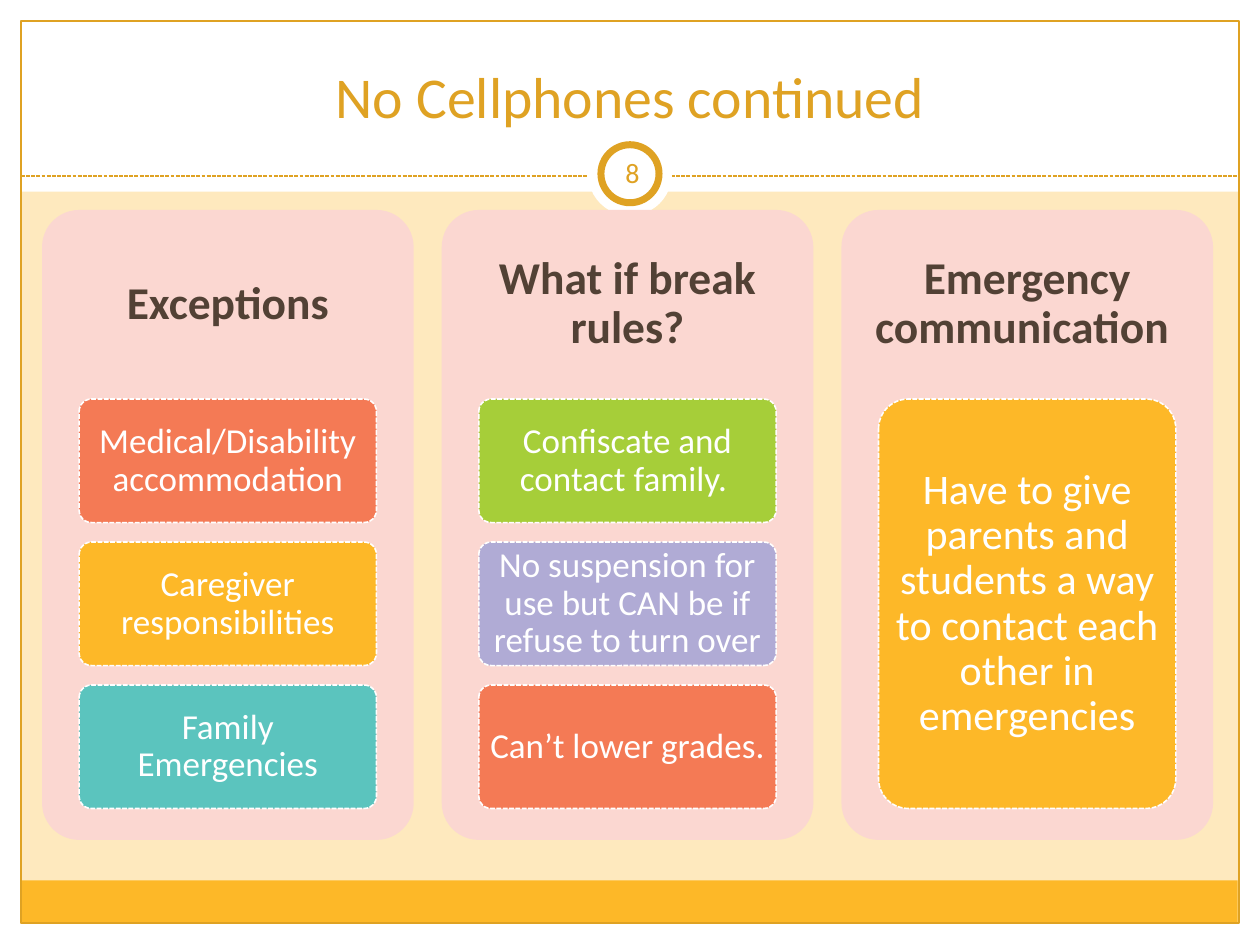
from pptx import Presentation, util as u
from pptx.dml.color import RGBColor
from pptx.enum import dml, shapes, text
from pptx.oxml.ns import qn
from lxml import etree

WHITE = RGBColor(0xFF, 0xFF, 0xFF)
CREAM = RGBColor(0xFE, 0xE9, 0xBE)
GOLD = RGBColor(0xDF, 0xA2, 0x23)
AMBER = RGBColor(0xFD, 0xB8, 0x28)
PINK = RGBColor(0xFB, 0xD7, 0xD1)
BROWN = RGBColor(0x52, 0x41, 0x35)
CORAL = RGBColor(0xF4, 0x7A, 0x55)
TEAL = RGBColor(0x5B, 0xC4, 0xBE)
GREEN = RGBColor(0xA6, 0xCE, 0x39)
LILAC = RGBColor(0xB0, 0xAB, 0xD5)

RECT = shapes.MSO_SHAPE.RECTANGLE
ROUND = shapes.MSO_SHAPE.ROUNDED_RECTANGLE
OVAL = shapes.MSO_SHAPE.OVAL

COLUMNS = [
    ("Exceptions", 20, [
        ("Medical/Disability accommodation", CORAL),
        ("Caregiver responsibilities", AMBER),
        ("Family Emergencies", TEAL)]),
    ("What if break rules?", 20, [
        ("Confiscate and contact family. ", GREEN),
        ("No suspension for use but CAN be if refuse to turn over", LILAC),
        ("Can’t lower grades.", CORAL)]),
    ("Emergency communication ", 24, [
        ("Have to give parents and students a way to contact each other in emergencies", AMBER)]),
]


def write(sp, words, size=20, color=WHITE, bold=False, spacing=0.9,
          anchor=text.MSO_ANCHOR.MIDDLE, margins=(4.3, 2.9)):
    tf = sp.text_frame
    tf.word_wrap = True
    tf.vertical_anchor = anchor
    tf.margin_left = tf.margin_right = u.Pt(margins[0])
    tf.margin_top = tf.margin_bottom = u.Pt(margins[1])
    p = tf.paragraphs[0]
    p.alignment = text.PP_ALIGN.CENTER
    p.line_spacing = spacing
    r = p.add_run()
    r.text = words
    r.font.name = "Calibri"
    r.font.size = u.Pt(size)
    r.font.bold = bold
    r.font.color.rgb = color


class Deck:
    """Holds the style and the current slide, and draws each kind of element."""

    def __init__(self, width, height, background):
        self.prs = Presentation()
        self.prs.slide_width, self.prs.slide_height = u.Pt(width), u.Pt(height)
        self.slide = self.prs.slides.add_slide(self.prs.slide_layouts[6])
        self.slide.background.fill.solid()
        self.slide.background.fill.fore_color.rgb = background

    def outline(self, line, color, width, dashed=False):
        line.color.rgb = color
        line.width = u.Pt(width)
        if dashed:
            line.dash_style = dml.MSO_LINE.SQUARE_DOT

    def shape(self, kind, box, fill=None, line=None, width=0.75, dashed=False):
        sp = self.slide.shapes.add_shape(kind, *map(u.Pt, box))
        sp.shadow.inherit = False
        if kind == ROUND:
            sp.adjustments[0] = 0.1
        if fill is None:
            sp.fill.background()
        else:
            sp.fill.solid()
            sp.fill.fore_color.rgb = fill
        if line is None:
            sp.line.fill.background()
        else:
            self.outline(sp.line, line, width, dashed)
        return sp

    def rule(self, x1, x2, y, color):
        cn = self.slide.shapes.add_connector(
            shapes.MSO_CONNECTOR.STRAIGHT, *map(u.Pt, (x1, y, x2, y)))
        self.outline(cn.line, color, 0.75, dashed=True)
        etree.SubElement(cn._element.spPr, qn("a:effectLst"))

    def label(self, box, words, **fmt):
        write(self.slide.shapes.add_textbox(*map(u.Pt, box)), words, **fmt)

    def column(self, left, heading, size, cards):
        top, width, height, gap = 120, 212.4, 360, 11.1
        self.shape(ROUND, (left, top, width, height), PINK)
        self.label((left, top, width, 0.3 * height), heading, size=26,
                   color=BROWN, bold=True, margins=(7.9, 7.9))
        card_height = (0.65 * height - gap * (len(cards) - 1)) / len(cards)
        for i, (words, fill) in enumerate(cards):
            y = top + 0.3 * height + i * (card_height + gap)
            card = self.shape(ROUND, (left + 0.1 * width, y, 0.8 * width, card_height),
                              fill, WHITE, 0.9, dashed=True)
            write(card, words, size=size)


def main():
    deck = Deck(720, 540, CREAM)
    for box in ((0, 528, 720, 12), (0, 0, 720, 109.5), (0, 0, 12, 540), (708, 0, 12, 540)):
        deck.shape(RECT, box, WHITE)
    deck.shape(RECT, (11.8, 503, 695.5, 24.8), AMBER)
    deck.shape(RECT, (12, 12, 696, 515.5), line=GOLD)
    deck.rule(12, 708, 100.6, GOLD)
    deck.shape(OVAL, (336, 75.3, 48, 48), WHITE)
    deck.shape(OVAL, (343.4, 82.7, 33.2, 33.2), WHITE, GOLD, 4)
    deck.label((24, 18, 672, 60), "No Cellphones continued", size=33, color=GOLD,
               spacing=1, anchor=text.MSO_ANCHOR.BOTTOM, margins=(7.2, 3.6))
    deck.label((343.4, 81, 36, 34.5), "8", size=16, color=GOLD, spacing=1, margins=(3.6, 3.6))
    for i, (heading, size, cards) in enumerate(COLUMNS):
        deck.column(24 + 228.4 * i, heading, size, cards)
    deck.prs.save("out.pptx")


if __name__ == "__main__":
    main()
